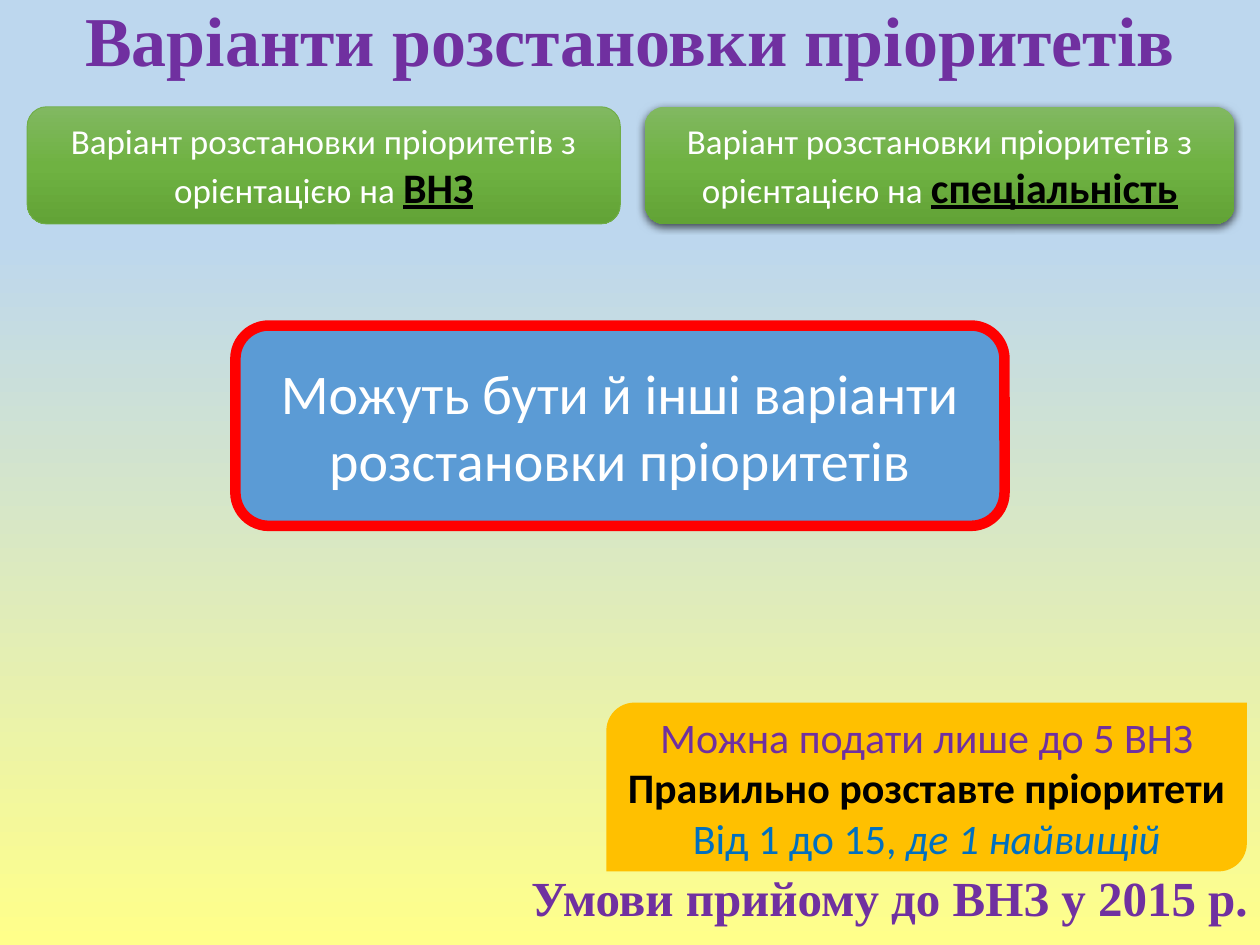
import copy
import lxml.etree
import pptx
import pptx.util
import pptx.dml.color
import pptx.enum.shapes
import pptx.enum.text
import pptx.oxml.ns

Pt = pptx.util.Pt
RGB = pptx.dml.color.RGBColor
KIND = pptx.enum.shapes.MSO_SHAPE
ALIGN = pptx.enum.text.PP_ALIGN
MIDDLE = pptx.enum.text.MSO_ANCHOR.MIDDLE
qn = pptx.oxml.ns.qn

PURPLE = RGB(0x70, 0x30, 0xA0)
BLACK = RGB(0, 0, 0)
WHITE = RGB(0xFF, 0xFF, 0xFF)
SKY = RGB(0xBD, 0xD7, 0xEE)
LEMON = RGB(0xFF, 0xFF, 0x8A)
GOLD = RGB(0xFF, 0xC0, 0x00)
AZURE = RGB(0x00, 0x70, 0xC0)
BLUE = RGB(0x5B, 0x9B, 0xD5)
RED = RGB(0xFF, 0, 0)
EDGE = RGB(0x70, 0xAD, 0x47)
GREENS = [(0, RGB(0x81, 0xB8, 0x61)), (0.5, RGB(0x6F, 0xB2, 0x42)),
          (1, RGB(0x62, 0xA3, 0x36))]


def shade(fill, node, stops):
    """Fill from top to bottom with the given colour stops."""
    fill.gradient()
    fill.gradient_angle = 270
    group = node.find(".//" + qn("a:gsLst"))
    while len(group) < len(stops):
        group.append(copy.deepcopy(group[-1]))
    for stop, (place, color) in zip(fill.gradient_stops, stops):
        stop.position = place
        stop.color.rgb = color


def panel(kind, left, top, width, height):
    """Add a plain shape with centred, wrapped text."""
    shape = slide.shapes.add_shape(kind, Pt(left), Pt(top), Pt(width), Pt(height))
    shape.shadow.inherit = False
    shape.line.fill.background()
    frame = shape.text_frame
    frame.word_wrap = True
    frame.vertical_anchor = MIDDLE
    frame.paragraphs[0].alignment = ALIGN.CENTER
    return shape


deck = pptx.Presentation()
deck.slide_width, deck.slide_height = Pt(720), Pt(540)
slide = deck.slides.add_slide(deck.slide_layouts[6])
shade(slide.background.fill, slide.element, [(0.25, SKY), (1, LEMON)])

# Heading and footer line
for text, left, top, width, size, align in [
    ("Умови прийому до ВНЗ у 2015 р.", 72, 489, 648, 28, ALIGN.RIGHT),
    ("Варіанти розстановки пріоритетів", 0, -0.5, 720, 40, ALIGN.CENTER),
]:
    box = slide.shapes.add_textbox(Pt(left), Pt(top), Pt(width), Pt(51))
    frame = box.text_frame
    frame.word_wrap = True
    frame.vertical_anchor = MIDDLE
    para = frame.paragraphs[0]
    para.text = text
    para.alignment = align
    para.line_spacing = 0.9
    para.font.name = "Times New Roman"
    para.font.size = Pt(size)
    para.font.bold = True
    para.font.color.rgb = PURPLE

# Rules for applying
note = panel(KIND.ROUND_2_DIAG_RECTANGLE, 346.5, 401.5, 366, 96.5)
note.fill.solid()
note.fill.fore_color.rgb = GOLD
frame = note.text_frame
frame.margin_top = frame.margin_bottom = 0
frame.text = ("Можна подати лише до 5 ВНЗ\n"
              "Правильно розставте пріоритети\n"
              "Від 1 до 15, ")
for para, color in zip(frame.paragraphs, [PURPLE, BLACK, AZURE]):
    para.alignment = ALIGN.CENTER
    para.font.name = "Calibri"
    para.font.size = Pt(24)
    para.font.bold = color == BLACK
    para.font.color.rgb = color
run = para.add_run()
run.text = "де 1 найвищій"
run.font.italic = True

# Two ways of ranking
cards = []
for left, width, word in [(368.5, 337, "спеціальність"), (15.5, 339, "ВНЗ")]:
    card = panel(KIND.ROUNDED_RECTANGLE, left, 61, width, 67)
    shade(card.fill, card.element, GREENS)
    para = card.text_frame.paragraphs[0]
    para.font.name = "Calibri"
    lead, key = para.add_run(), para.add_run()
    lead.text = "Варіант розстановки пріоритетів з орієнтацією на "
    lead.font.size = Pt(20)
    lead.font.color.rgb = WHITE
    key.text = word
    key.font.size = Pt(24)
    key.font.bold = key.font.underline = True
    key.font.color.rgb = BLACK
    cards.append(card)

# Shadow on the right card, thin edge on the left one
glow = cards[0].element.spPr.find(qn("a:effectLst"))
cast = lxml.etree.SubElement(
    glow, qn("a:outerShdw"), blurRad=str(Pt(4.5)), dist=str(Pt(1.5)),
    dir="5400000", algn="ctr", rotWithShape="0")
tint = lxml.etree.SubElement(cast, qn("a:srgbClr"), val="000000")
lxml.etree.SubElement(tint, qn("a:alpha"), val="63000")
cards[1].line.color.rgb = EDGE
cards[1].line.width = Pt(0.5)

# Central remark
main = panel(KIND.ROUNDED_RECTANGLE, 134.5, 186, 439.5, 114.5)
main.fill.solid()
main.fill.fore_color.rgb = BLUE
main.line.color.rgb = RED
main.line.width = Pt(6)
para = main.text_frame.paragraphs[0]
para.text = "Можуть бути й інші варіанти розстановки пріоритетів"
para.font.name = "Calibri"
para.font.size = Pt(32)
para.font.color.rgb = WHITE

deck.save("out.pptx")
